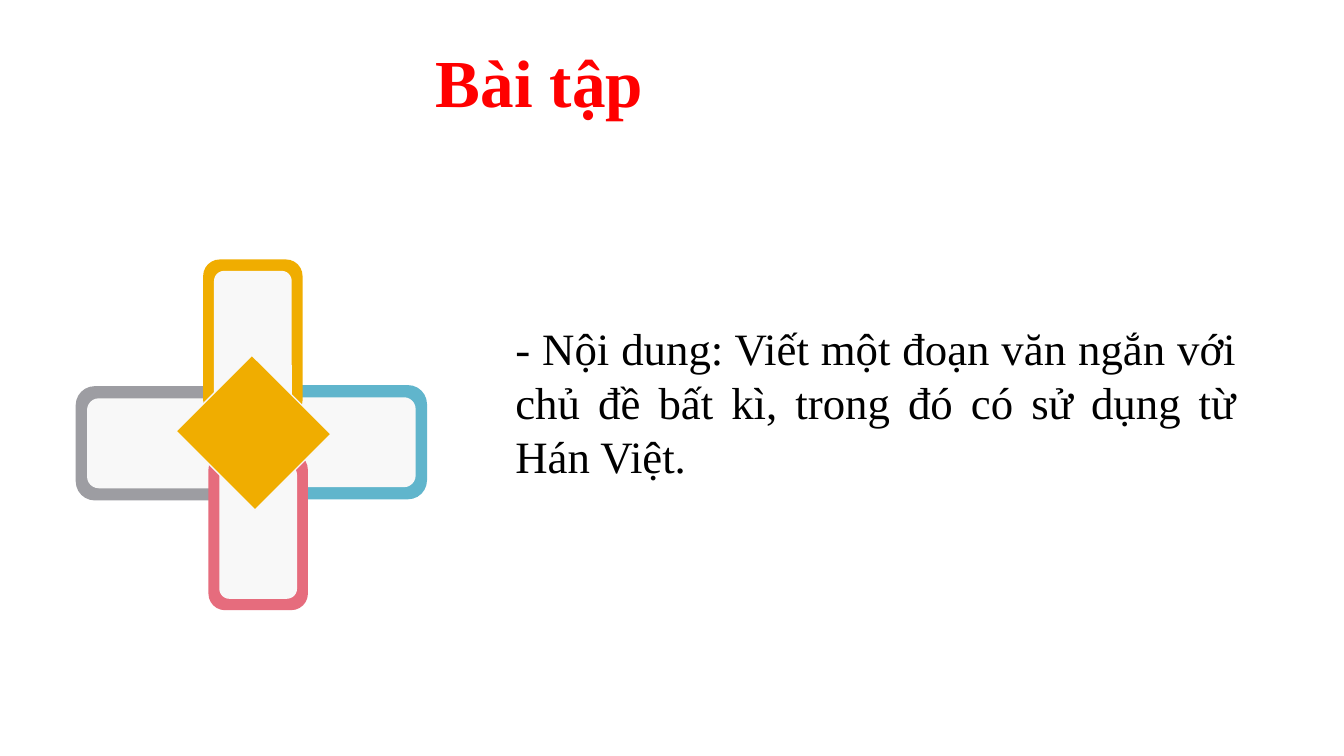
from dataclasses import dataclass

from pptx import Presentation
from pptx.dml.color import RGBColor
from pptx.enum.shapes import MSO_SHAPE as Shape
from pptx.enum.text import MSO_AUTO_SIZE as AutoSize, PP_ALIGN as Align
from pptx.util import Cm, Pt


@dataclass(frozen=True)
class Theme:
    font: str = "Times New Roman"
    title_size: int = 36
    body_size: int = 24
    title: str = "FF0000"
    body: str = "000000"
    panel: str = "F8F8F8"
    amber: str = "F0AD00"
    blue: str = "60B5CC"
    grey: str = "9D9DA2"
    rose: str = "E66C7D"


theme = Theme()


def add_block(shapes, kind, center, size, color, rotation=0):
    """Add a borderless shape placed by its centre; lengths in cm."""
    (x, y), (width, height) = center, size
    block = shapes.add_shape(kind, Cm(x - width / 2), Cm(y - height / 2), Cm(width), Cm(height))
    block.rotation = rotation
    block.shadow.inherit = False
    block.fill.solid()
    block.fill.fore_color.rgb = RGBColor.from_string(color)
    block.line.fill.background()
    return block


def add_text(text, box, size, color, bold=False, wrap=True, align=None):
    frame = slide.shapes.add_textbox(*map(Cm, box)).text_frame
    frame.margin_left = frame.margin_right = Cm(0.19)
    frame.margin_top = frame.margin_bottom = Cm(0.1)
    frame.word_wrap = wrap
    frame.auto_size = AutoSize.SHAPE_TO_FIT_TEXT
    paragraph = frame.paragraphs[0]
    paragraph.alignment = align
    run = paragraph.add_run()
    run.text = text
    run.font.name = theme.font
    run.font.size = Pt(size)
    run.font.bold = bold
    run.font.color.rgb = RGBColor.from_string(color)


presentation = Presentation()
presentation.slide_width = Cm(25.4)
presentation.slide_height = Cm(14.29)
slide = presentation.slides.add_slide(presentation.slide_layouts[6])

# Four arms of the cross, each a coloured frame around a light panel
side_arm = ((2.16, 3.0), (1.7, 2.57), 90)
upright_arm = ((1.88, 2.97), (1.47, 2.54), 0)
arms = [
    ((6.57, 8.36), side_arm, theme.blue),
    ((2.93, 8.38), side_arm, theme.grey),
    ((4.78, 6.39), upright_arm, theme.amber),
    ((4.88, 10.05), upright_arm, theme.rose),
]
for center, (frame_size, panel_size, rotation), color in arms:
    arm = slide.shapes.add_group_shape()
    add_block(arm.shapes, Shape.ROUNDED_RECTANGLE, center, frame_size, color, rotation)
    panel = add_block(arm.shapes, Shape.ROUNDED_RECTANGLE, center, panel_size, theme.panel, rotation)
    panel.adjustments[0] = 0.13

diamond = add_block(slide.shapes, Shape.RECTANGLE, (4.79, 8.18), (2.11, 2.03), theme.amber, 45)
diamond.line.color.rgb = RGBColor.from_string(theme.panel)
diamond.line.width = Pt(0.75)

add_text("Bài tập", (8.05, 0.66, 4.65, 1.73), theme.title_size, theme.title, bold=True, wrap=False)
add_text(
    "- Nội dung: Viết một đoạn văn ngắn với chủ đề bất kì, trong đó có sử dụng từ Hán Việt.",
    (9.55, 5.97, 14, 3.28), theme.body_size, theme.body, align=Align.JUSTIFY,
)

presentation.save("out.pptx")
